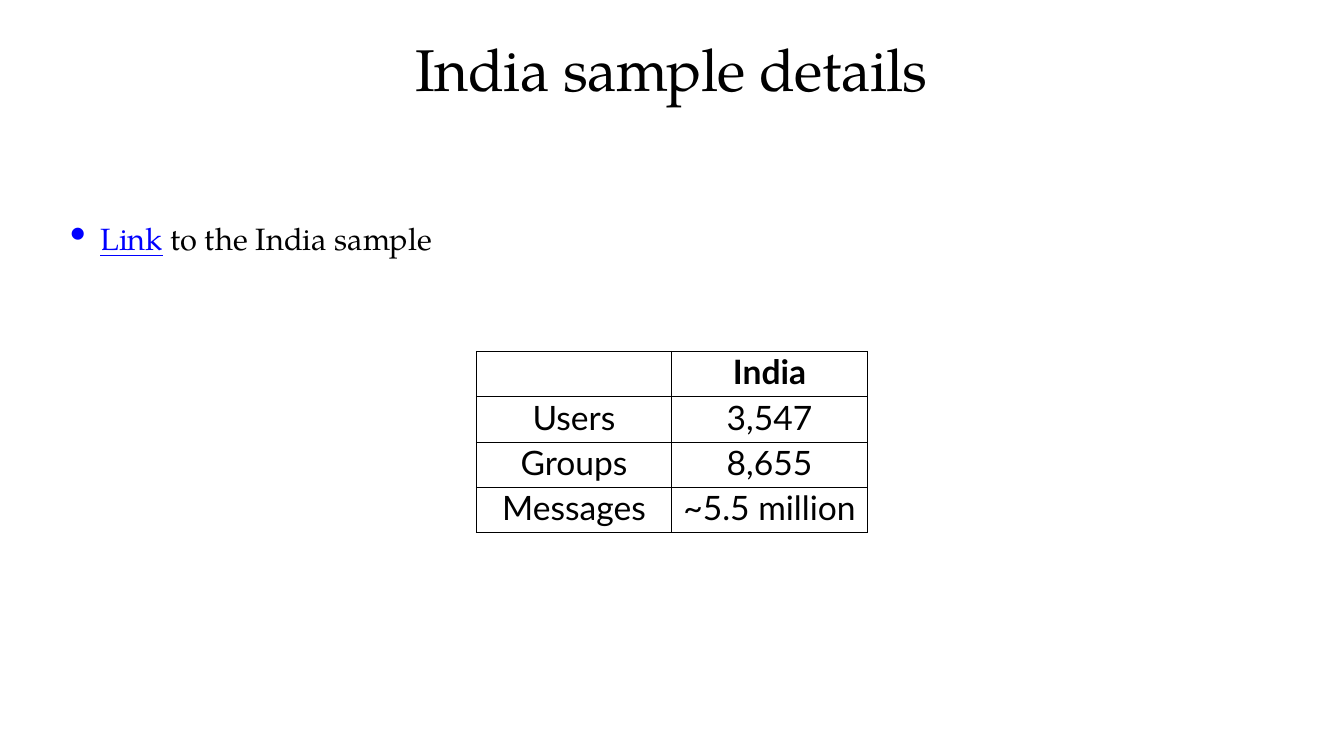
"""Builds the slide with details of the India sample."""
import pptx
import pptx.dml.color
import pptx.enum.text
import pptx.oxml
import pptx.oxml.ns
import pptx.util

Inches = pptx.util.Inches
Pt = pptx.util.Pt
RGBColor = pptx.dml.color.RGBColor
ALIGN = pptx.enum.text.PP_ALIGN
ANCHOR = pptx.enum.text.MSO_ANCHOR

BLACK = RGBColor(0x00, 0x00, 0x00)
BLUE = RGBColor(0x00, 0x00, 0xFF)
SERIF = "TeX Gyre Pagella"
SANS = "Lato"
NS = pptx.oxml.ns.nsdecls("a")


def apply(obj, values):
    for key, value in values.items():
        setattr(obj, key, value)


class Deck:
    def __init__(self):
        self.file = pptx.Presentation()
        apply(self.file, {"slide_width": Inches(26.67), "slide_height": Inches(15)})
        self.slide = self.file.slides.add_slide(self.file.slide_layouts[6])
        self.inset = Inches(0.06)
        self.rule = Pt(1)

    def label(self, para, text, color=BLACK, track=0, **font):
        run = para.add_run()
        run.text = text
        apply(run.font, font)
        run.font.color.rgb = color
        if track:
            run._r.get_or_add_rPr().set("spc", str(track))

    def text(self, box, runs, bullet=False, **form):
        frame = self.slide.shapes.add_textbox(*map(Inches, box)).text_frame
        sides = ("left", "right", "top", "bottom")
        apply(frame, {f"margin_{side}": self.inset for side in sides})
        apply(frame, {"word_wrap": True, "vertical_anchor": ANCHOR.TOP})
        para = frame.paragraphs[0]
        if bullet:
            self.bullet(para)
        apply(para, form)
        for text, style in runs:
            self.label(para, text, **style)

    def bullet(self, para):
        props = para._p.get_or_add_pPr()
        for key, value in {"marL": Inches(0.6), "indent": -Inches(0.6)}.items():
            props.set(key, str(int(value)))
        for tag in ('buSzPct val="150000"', 'buChar char="•"'):
            props.append(pptx.oxml.parse_xml(f"<a:{tag} {NS}/>"))

    def border(self, cell):
        props = cell._tc.get_or_add_tcPr()
        for side in "LRTB":
            props.append(pptx.oxml.parse_xml(
                f'<a:ln{side} {NS} w="{int(self.rule)}"><a:solidFill>'
                f'<a:srgbClr val="{str(BLACK)}"/></a:solidFill></a:ln{side}>'))

    def table(self, box, data):
        size = len(data), len(data[0])
        grid = self.slide.shapes.add_table(*size, *map(Inches, box)).table
        apply(grid, {"first_row": False, "horz_banding": False})
        for r, row in enumerate(data):
            for c, text in enumerate(row):
                cell = grid.cell(r, c)
                self.border(cell)
                cell.fill.background()
                cell.vertical_anchor = ANCHOR.MIDDLE
                para = cell.text_frame.paragraphs[0]
                apply(para, {"alignment": ALIGN.CENTER, "line_spacing": 0.9})
                if text:
                    self.label(para, text, name=SANS, size=Pt(48), bold=r == 0)


def main():
    deck = Deck()
    title = {"name": SERIF, "size": Pt(84), "track": -80}
    deck.text((1.33, 0.85, 24, 1.89), [("India sample details", title)],
              alignment=ALIGN.CENTER, line_spacing=0.8)
    body = {"name": SERIF, "size": Pt(44)}
    link = {**body, "color": BLUE, "underline": True}
    deck.text((1.33, 4.39, 24, 9.28),
              [("Link", link), (" to the India sample", body)],
              bullet=True, line_spacing=0.9)
    deck.table((9.45, 6.97, 7.76, 3.6), [
        ("", "India"),
        ("Users", "3,547"),
        ("Groups", "8,655"),
        ("Messages", "~5.5 million"),
    ])
    deck.file.save("out.pptx")


if __name__ == "__main__":
    main()
